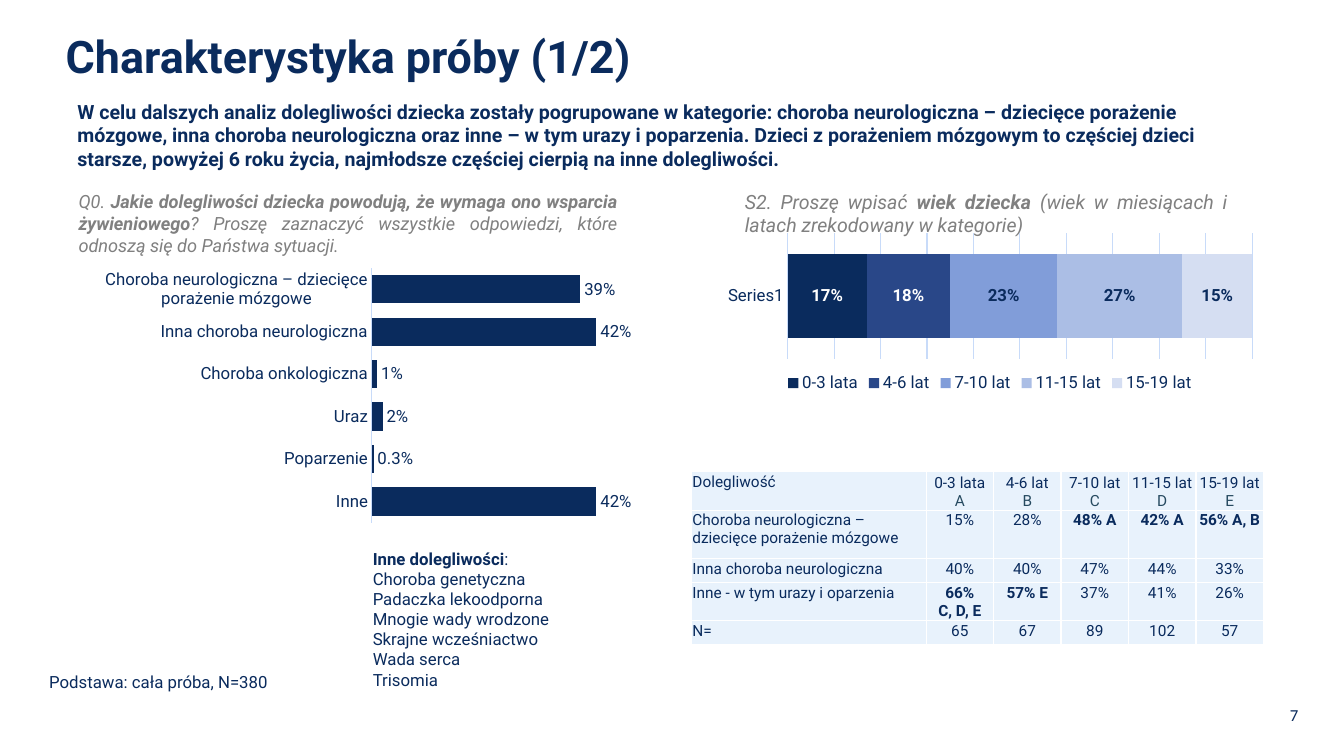
from lxml import etree
from pptx import Presentation
from pptx.chart.data import CategoryChartData
from pptx.dml.color import RGBColor
from pptx.enum.chart import XL_CHART_TYPE, XL_LABEL_POSITION, XL_LEGEND_POSITION, XL_TICK_MARK
from pptx.enum.text import MSO_ANCHOR, MSO_AUTO_SIZE, PP_ALIGN
from pptx.oxml.ns import qn
from pptx.util import Cm, Pt

CLUSTERED, STACKED = XL_CHART_TYPE.BAR_CLUSTERED, XL_CHART_TYPE.BAR_STACKED_100
OUTSIDE, CENTRED = XL_LABEL_POSITION.OUTSIDE_END, XL_LABEL_POSITION.CENTER
BOTTOM_LEGEND, NO_TICK = XL_LEGEND_POSITION.BOTTOM, XL_TICK_MARK.NONE
LEFT, CENTER, RIGHT, JUSTIFY = PP_ALIGN.LEFT, PP_ALIGN.CENTER, PP_ALIGN.RIGHT, PP_ALIGN.JUSTIFY
TOP, MIDDLE, BOTTOM = MSO_ANCHOR.TOP, MSO_ANCHOR.MIDDLE, MSO_ANCHOR.BOTTOM
NO_FIT = MSO_AUTO_SIZE.NONE

FONT = "Roboto"
COLORS = {
    "navy": "0A2B5D", "gray": "808080", "white": "FFFFFF", "grid": "C8DBF9",
    "cell": "E8F2FC", "letter": "264A60", "blue": "294788", "mid": "819DD9",
    "light": "ABBEE5", "pale": "D5DEF2",
}

# Content; in rich text each run is (text, bold)
TITLE = "Charakterystyka próby (1/2)"
LEAD = [("W celu dalszych analiz dolegliwości dziecka zostały pogrupowane w kategorie: "
         "choroba neurologiczna – dziecięce porażenie mózgowe, inna choroba neurologiczna "
         "oraz inne – w tym urazy i poparzenia. Dzieci z porażeniem mózgowym to częściej "
         "dzieci starsze, powyżej 6 roku życia, najmłodsze częściej cierpią na inne "
         "dolegliwości.", True)]
AILMENT_QUESTION = [
    ("Q0. ", False),
    ("Jakie dolegliwości dziecka powodują, że wymaga ono wsparcia żywieniowego", True),
    ("? Proszę zaznaczyć wszystkie odpowiedzi, które odnoszą się do Państwa sytuacji.", False),
]
AGE_QUESTION = [
    ("S2. Proszę wpisać ", False),
    ("wiek dziecka ", True),
    ("(wiek w miesiącach i latach zrekodowany w kategorie)", False),
]
BASE = [("Podstawa: cała próba, N=380", False)]
PAGE = [("7", False)]
OTHER_AILMENTS = [
    [("Inne dolegliwości", True), (":", False)],
    [("Choroba genetyczna", False)],
    [("Padaczka lekoodporna", False)],
    [("Mnogie wady wrodzone", False)],
    [("Skrajne wcześniactwo", False)],
    [("Wada serca", False)],
    [("Trisomia", False)],
]
AILMENT_SHARES = {
    "Choroba neurologiczna – dziecięce porażenie mózgowe": 0.39,
    "Inna choroba neurologiczna": 0.42,
    "Choroba onkologiczna": 0.01,
    "Uraz": 0.02,
    "Poparzenie": 0.003,
    "Inne": 0.42,
}
AGE_GROUPS = [  # name, share, fill, label colour
    ("0-3 lata", 0.17, "navy", "white"),
    ("4-6 lat", 0.18, "blue", "white"),
    ("7-10 lat", 0.23, "mid", "navy"),
    ("11-15 lat", 0.27, "light", "navy"),
    ("15-19 lat", 0.15, "pale", "navy"),
]
AGE_LETTERS = "ABCDE"
AILMENTS_BY_AGE = [
    ["Choroba neurologiczna – dziecięce porażenie mózgowe",
     "15%", "28%", "48% A", "42% A", "56% A, B"],
    ["Inna choroba neurologiczna", "40%", "40%", "47%", "44%", "33%"],
    ["Inne - w tym urazy i oparzenia", "66%\nC, D, E", "57% E", "37%", "41%", "26%"],
    ["N=", "65", "67", "89", "102", "57"],
]
COLUMN_WIDTHS = [5.92] + [1.7] * len(AGE_GROUPS)
ROW_HEIGHTS = [0.97, 1.22, 0.6, 0.96, 0.6]


def rgb(name):
    return RGBColor.from_string(COLORS[name])


def cm(*lengths):
    return [Cm(length) for length in lengths]


def style(font, size, color="navy", bold=None, italic=None, face=FONT):
    font.name, font.size, font.bold, font.italic = face, Pt(size), bold, italic
    font.color.rgb = rgb(color)


def place(shape, box):
    shape.left, shape.top, shape.width, shape.height = cm(*box)


def write(paragraph, runs, size, color="navy", align=LEFT, italic=None, face=FONT):
    paragraph.alignment = align
    style(paragraph.font, size, color, None, italic, face)
    for text, bold in runs:
        run = paragraph.add_run()
        run.text, run.font.bold = text, bold


def add_text(slide, box, runs, size, anchor=TOP, **look):
    frame = slide.shapes.add_textbox(*cm(*box)).text_frame
    frame.word_wrap, frame.vertical_anchor = True, anchor
    write(frame.paragraphs[0], runs, size, **look)


def add_bars(slide, kind, box, categories, series, label_format, plot_box, maximum):
    """Add a bar chart; series holds (name, values, fill, label colour)."""
    data = CategoryChartData(number_format="0%")
    data.categories = categories
    for name, values, _, _ in series:
        data.add_series(name, values)
    chart = slide.shapes.add_chart(kind, *cm(*box), data).chart
    chart.has_title = chart.has_legend = False
    style(chart.font, 12)
    plot = chart.plots[0]
    plot.gap_width, plot.vary_by_categories = 50, False
    stacked = kind == STACKED
    plot.overlap = 100 if stacked else 0
    for bars, (_, _, fill, label_color) in zip(plot.series, series):
        bars.format.fill.solid()
        bars.format.fill.fore_color.rgb = rgb(fill)
        labels = bars.data_labels
        labels.show_value, labels.position = True, CENTRED if stacked else OUTSIDE
        labels.number_format, labels.number_format_is_linked = label_format, False
        style(labels.font, 12, label_color, bold=stacked)
    names, scale = chart.category_axis, chart.value_axis
    names.reverse_order = True
    names.major_tick_mark = names.minor_tick_mark = NO_TICK
    names.format.line.color.rgb, names.format.line.width = rgb("grid"), Pt(0.75)
    style(names.tick_labels.font, 12)
    scale.minimum_scale, scale.maximum_scale, scale.major_unit = 0, maximum, 0.1
    scale.has_major_gridlines, scale.visible = stacked, False
    if stacked:
        grid = scale.major_gridlines.format.line
        grid.color.rgb, grid.width = rgb("grid"), Pt(0.75)

    # Fixed inner plot area, as fractions of the chart
    area = chart.element.find(".//" + qn("c:plotArea"))
    for old in area.findall(qn("c:layout")):
        area.remove(old)
    layout = etree.Element(qn("c:layout"))
    manual = etree.SubElement(layout, qn("c:manualLayout"))
    settings = [("layoutTarget", "inner"), ("xMode", "edge"), ("yMode", "edge")]
    for tag, value in settings + list(zip("xywh", plot_box)):
        etree.SubElement(manual, qn("c:" + tag), val=str(value))
    area.insert(0, layout)
    return chart


def format_cell(cell, lines, align, anchor, bold):
    """Fill a table cell; lines holds (text, colour)."""
    properties = cell._tc.get_or_add_tcPr()
    for side in ("a:lnL", "a:lnR", "a:lnT", "a:lnB"):
        line = etree.SubElement(properties, qn(side), w=str(int(Pt(1))))
        fill = etree.SubElement(line, qn("a:solidFill"))
        etree.SubElement(fill, qn("a:srgbClr"), val=COLORS["white"])
    cell.fill.solid()
    cell.fill.fore_color.rgb = rgb("cell")
    cell.margin_left = cell.margin_right = cell.margin_top = Cm(0.03)
    cell.margin_bottom, cell.vertical_anchor = 0, anchor
    frame = cell.text_frame
    for i, (text, color) in enumerate(lines):
        paragraph = frame.add_paragraph() if i else frame.paragraphs[0]
        paragraph.text, paragraph.alignment = text, align
        style(paragraph.font, 11, color, bold)


def main():
    deck = Presentation()
    deck.slide_width, deck.slide_height = cm(33.87, 19.05)
    slide = deck.slides.add_slide(deck.slide_layouts[1])
    title, others = slide.placeholders

    # Title and texts
    place(title, (1.4, 0.74, 26.34, 1.63))
    title.text_frame.auto_size, title.text_frame.vertical_anchor = NO_FIT, TOP
    heading = title.text_frame.paragraphs[0]
    heading.line_spacing = 0.9
    write(heading, [(TITLE, True)], 32)
    add_text(slide, (1.7, 2.39, 29.95, 2.06), LEAD, 14)
    add_text(slide, (1.73, 4.67, 14.07, 1.93), AILMENT_QUESTION, 13,
             color="gray", align=JUSTIFY, italic=True)
    add_text(slide, (18.52, 4.65, 12.67, 1.45), AGE_QUESTION, 14,
             color="gray", align=JUSTIFY, italic=True)
    add_text(slide, (0.99, 16.79, 9.42, 0.76), BASE, 12)
    add_text(slide, (25.35, 17.5, 7.62, 1.02), PAGE, 12, MIDDLE, align=RIGHT, face="Calibri")

    # List of other ailments
    place(others, (9.14, 13.69, 8.1, 3.84))
    others.text_frame.auto_size = NO_FIT
    for i, runs in enumerate(OTHER_AILMENTS):
        frame = others.text_frame
        paragraph = frame.add_paragraph() if i else frame.paragraphs[0]
        write(paragraph, runs, 12)
        paragraph.space_before = Pt(0)
        properties = paragraph._p.get_or_add_pPr()
        properties.set("marL", "0")
        properties.set("indent", "0")
        properties.find(qn("a:spcBef")).addnext(etree.Element(qn("a:buNone")))

    # Charts
    add_bars(slide, CLUSTERED, (1.78, 6.55, 14.33, 6.83), list(AILMENT_SHARES),
             [("Series 1", list(AILMENT_SHARES.values()), "navy", "navy")],
             "[<0.0095]0.0%;0%", (0.53, 0.03, 0.47, 0.94), 0.5)
    ages = add_bars(slide, STACKED, (18.06, 5.79, 13.77, 4.22), ["Series1"],
                    [(name, [share], fill, label) for name, share, fill, label in AGE_GROUPS],
                    "0%", (0.13, 0.02, 0.85, 0.75), 1)
    ages.has_legend = True
    ages.legend.position, ages.legend.include_in_layout = BOTTOM_LEGEND, False
    style(ages.legend.font, 12)

    # Table of ailments by age
    table = slide.shapes.add_table(
        len(ROW_HEIGHTS), len(COLUMN_WIDTHS),
        *cm(17.42, 11.89, sum(COLUMN_WIDTHS), sum(ROW_HEIGHTS))).table
    table.first_row = table.horz_banding = False
    for column, width in zip(table.columns, COLUMN_WIDTHS):
        column.width = Cm(width)
    for row, height in zip(table.rows, ROW_HEIGHTS):
        row.height = Cm(height)
    format_cell(table.cell(0, 0), [("Dolegliwość", "navy")], LEFT, TOP, False)
    for c, (group, letter) in enumerate(zip(AGE_GROUPS, AGE_LETTERS), 1):
        format_cell(table.cell(0, c), [(group[0], "navy"), (letter, "letter")],
                    CENTER, BOTTOM, False)
    for r, values in enumerate(AILMENTS_BY_AGE, 1):
        for c, value in enumerate(values):
            significant = c > 0 and any(letter in value for letter in AGE_LETTERS)
            format_cell(table.cell(r, c), [(value, "navy")],
                        CENTER if c else LEFT, TOP, significant)

    deck.save("out.pptx")


if __name__ == "__main__":
    main()
